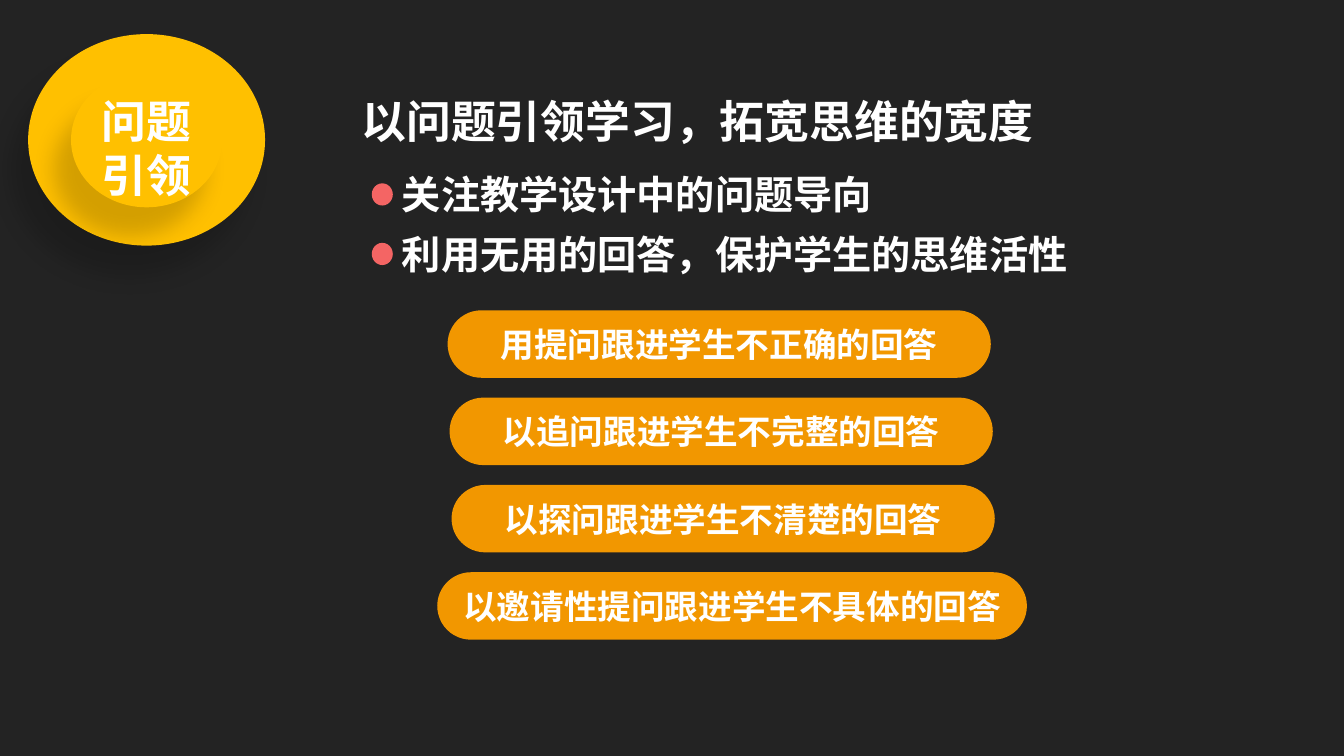
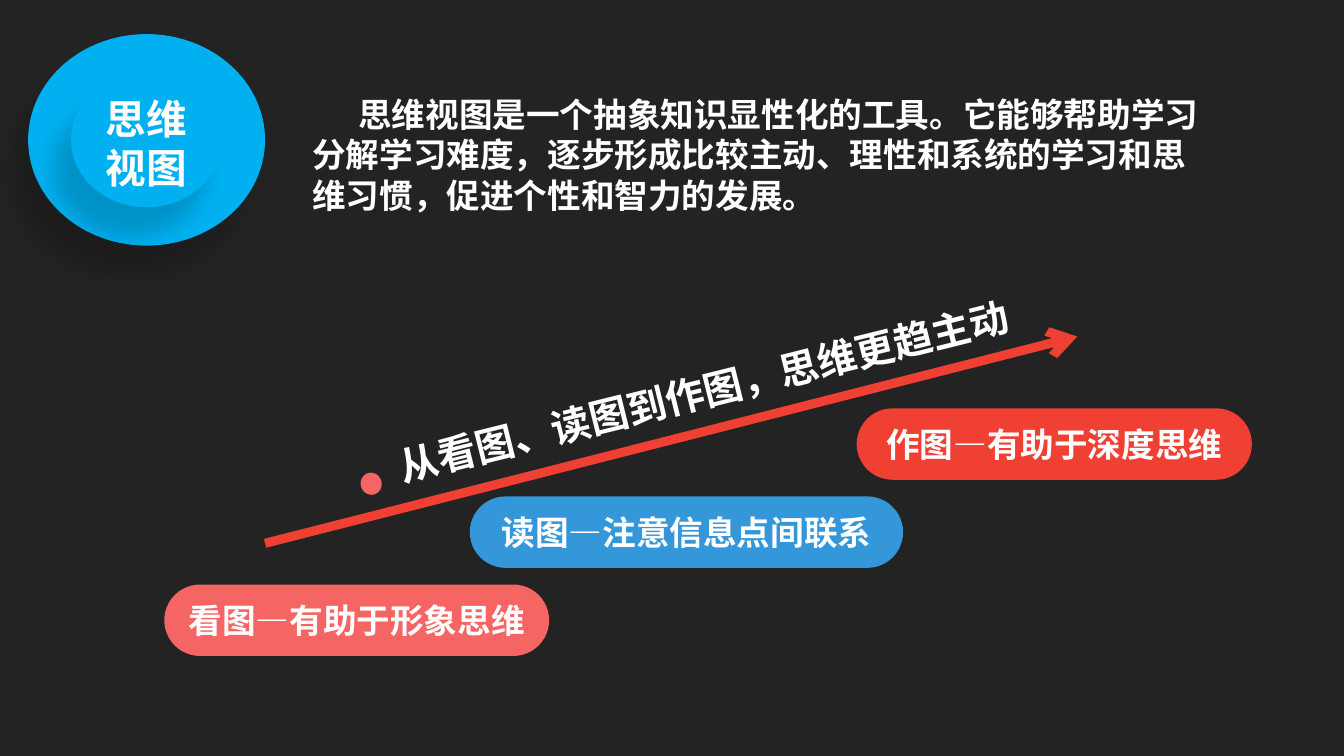
from lxml import etree
from pptx import Presentation
from pptx import util as u
from pptx.dml.color import RGBColor
from pptx.enum import shapes as sh, text as tx
from pptx.oxml import ns

HUES = {
    "back": "232323", "white": "FFFFFF", "gold": "FFC000", "sky": "00B0F0",
    "coral": "F46564", "orange": "F29700", "blue": "3497DA", "red": "F04033",
    "black": "000000",
}
FONT = "Open Sans"
OVAL = sh.MSO_SHAPE.OVAL
PILL = sh.MSO_SHAPE.ROUNDED_RECTANGLE
LEFT, MID = tx.PP_ALIGN.LEFT, tx.PP_ALIGN.CENTER
TOP, HALF = tx.MSO_ANCHOR.TOP, tx.MSO_ANCHOR.MIDDLE


def hue(name):
    return RGBColor.from_string(HUES[name])


def cm(*nums):
    return [u.Cm(n) for n in nums]


def add(node, tag, **attrs):
    return etree.SubElement(node, ns.qn(tag), attrs)


def write(shape, *lines, size=24, align=LEFT, anchor=TOP, indent=0):
    frame = shape.text_frame
    frame.word_wrap = True
    frame.vertical_anchor = anchor
    for i, line in enumerate(lines):
        para = frame.add_paragraph() if i else frame.paragraphs[0]
        para.alignment = align
        if indent:
            para._p.get_or_add_pPr().set("indent", str(u.Cm(indent)))
        run = para.add_run()
        run.text = line
        font = run.font
        font.name, font.size, font.bold = FONT, u.Pt(size), True
        font.color.rgb = hue("white")


def draw(home, kind, box, fill):
    shape = home.shapes.add_shape(kind, *cm(*box))
    shape.shadow.inherit = False
    shape.fill.solid()
    shape.fill.fore_color.rgb = hue(fill)
    shape.line.fill.background()
    return shape


def label(home, box, *lines, **form):
    frame = home.shapes.add_textbox(*cm(*box))
    write(frame, *lines, **form)
    return frame


def shade(shape):
    effect = shape._element.spPr.find(ns.qn("a:effectLst"))
    outer = add(effect, "a:outerShdw", blurRad=str(u.Pt(16)),
                dist=str(u.Pt(24)), dir=str(120 * 60000),
                algn="ctr", rotWithShape="0")
    tint = add(outer, "a:srgbClr", val=HUES["black"])
    add(tint, "a:alpha", val="17000")


def badge(slide, box, words, fill, size):
    x, y, w, h = box
    group = slide.shapes.add_group_shape()
    for wide, high in ((w, h), (3.81, 3.4)):
        spot = (x + (w - wide) / 2, y + (h - high) / 2, wide, high)
        shade(draw(group, OVAL, spot, fill))
    label(slide, (x + (w - 2.84) / 2, y + 1.38, 2.84, 3), *words,
          size=size, align=MID)


def pill(slide, box, words, fill):
    shape = draw(slide, PILL, box, fill)
    shape.adjustments[0] = 0.5
    write(shape, words, align=MID, anchor=HALF)


def point(slide, box, words, drop=0.45, turn=0):
    x, y = box[:2]
    dot = draw(slide, OVAL, (x - 0.51, y + drop, 0.53, 0.56), "coral")
    dot.rotation = turn
    label(slide, box, words, size=28).rotation = turn


def arrow(slide, start, end, fill):
    line = slide.shapes.add_connector(
        sh.MSO_CONNECTOR.STRAIGHT, *cm(*start, *end))
    line.line.width = u.Pt(6.5)
    line.line.color.rgb = hue(fill)
    add(line.line._get_or_add_ln(), "a:tailEnd", type="arrow")
    add(line._element.spPr, "a:effectLst")


def page(deck, words, fill, size):
    slide = deck.slides.add_slide(deck.slide_layouts[6])
    back = slide.background.fill
    back.solid()
    back.fore_color.rgb = hue("back")
    badge(slide, (0.71, 0.86, 5.97, 5.33), words, fill, size)
    return slide


def lead(deck):
    slide = page(deck, ("问题", "引领"), "gold", 32)
    label(slide, (8.86, 2.24, 17.8, 1.63),
          "以问题引领学习，拓宽思维的宽度", size=32)
    points = ("关注教学设计中的问题导向", "利用无用的回答，保护学生的思维活性")
    for i, words in enumerate(points):
        point(slide, (9.88, 4.17 + 1.5 * i, 17.4, 1.45), words)
    pills = (
        (11.28, 13.69, "用提问跟进学生不正确的回答"),
        (11.33, 13.69, "以追问跟进学生不完整的回答"),
        (11.38, 13.69, "以探问跟进学生不清楚的回答"),
        (11.02, 14.86, "以邀请性提问跟进学生不具体的回答"),
    )
    for i, (x, w, words) in enumerate(pills):
        pill(slide, (x, 7.82 + 2.2 * i, w, 1.7), words, "orange")


def view(deck):
    slide = page(deck, ("思维", "视图"), "sky", 29)
    label(slide, (7.62, 2.24, 22.96, 3.33),
          "思维视图是一个抽象知识显性化的工具。它能够帮助学习分解学习难度，"
          "逐步形成比较主动、理性和系统的学习和思维习惯，促进个性和智力的发展。",
          indent=1.16)
    pills = (
        (4.14, 9.7, "看图—有助于形象思维", "coral"),
        (11.84, 10.92, "读图—注意信息点间联系", "blue"),
        (21.59, 9.96, "作图—有助于深度思维", "red"),
    )
    for i, (x, w, words, fill) in enumerate(pills):
        pill(slide, (x, 14.73 - 2.22 * i, w, 1.8), words, fill)
    arrow(slide, (6.68, 13.69), (27.15, 8.48), "red")
    point(slide, (9.6, 9.12, 16.41, 1.45),
          "从看图、读图到作图，思维更趋主动", drop=2.79, turn=346)


def main():
    deck = Presentation()
    deck.slide_width, deck.slide_height = cm(33.87, 19.05)
    lead(deck)
    view(deck)
    deck.save("out.pptx")


if __name__ == "__main__":
    main()
